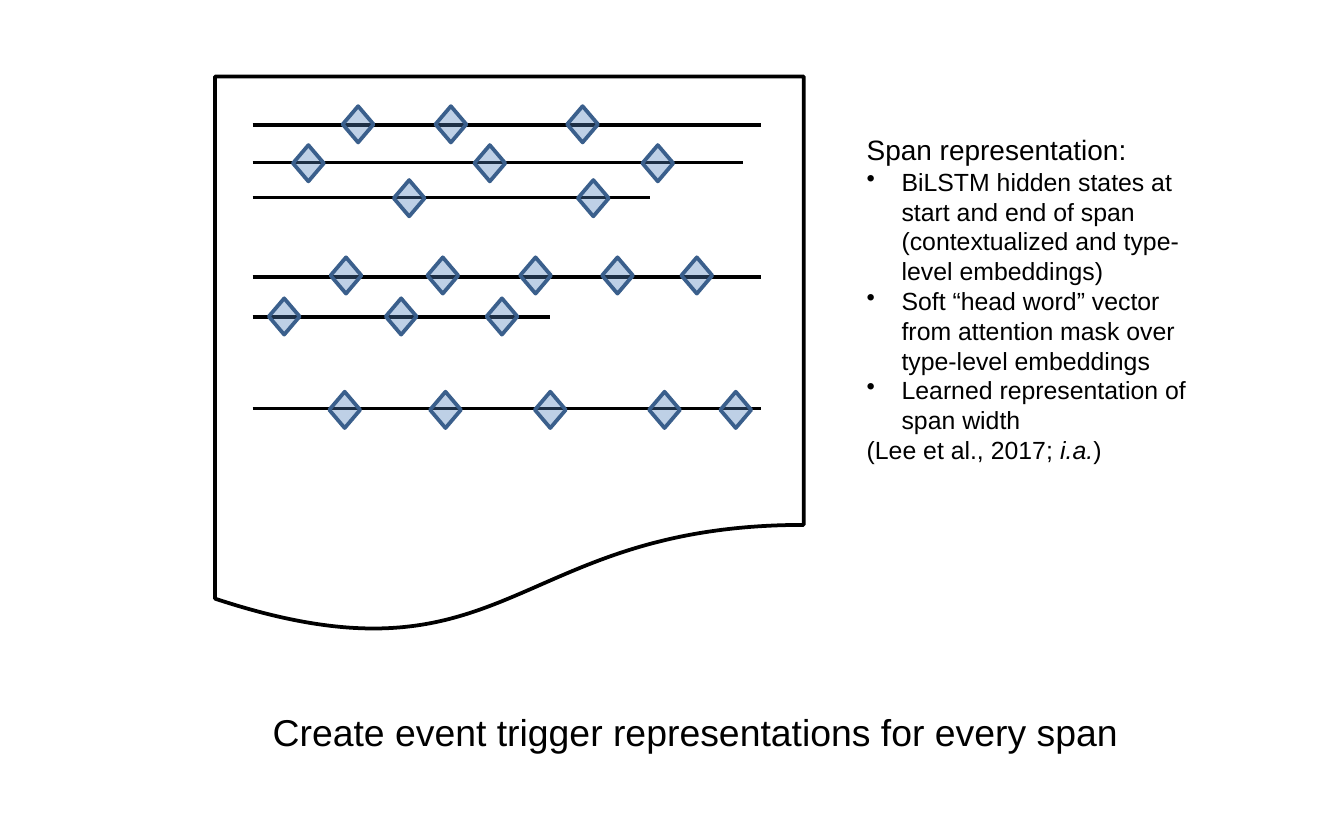
from lxml import etree
from pptx import Presentation, util as u
from pptx.dml.color import RGBColor
from pptx.enum import shapes, text
from pptx.oxml.ns import qn

presentation = Presentation()
presentation.slide_width = u.Inches(10)
presentation.slide_height = u.Inches(6.25)
slide = presentation.slides.add_slide(presentation.slide_layouts[6])

# The slide is a grid of 1000 columns by 625 rows of square cells.
CELL = presentation.slide_width // 1000
BLACK = "000000"
DIAMOND_WIDTH, DIAMOND_HEIGHT = 23, 27
LINE_START = 188

# Each sentence: row of its line, column where it ends,
# top row of its diamonds, left columns of its diamonds.
SENTENCES = [
    (93, 566, 79, [255, 324, 422]),
    (121, 553, 108, [218, 353, 478]),
    (147, 484, 134, [293, 430]),
    (206, 566, 191.5, [246, 318, 387, 448, 507]),
    (236, 409, 222, [200, 287, 362]),
    (304, 566, 291.5, [245, 320, 398, 483, 536]),
]


def paint(color_format, color):
    color_format.rgb = RGBColor.from_string(color)


def cells(*counts):
    """Turn counts of grid cells into lengths."""
    return [u.Emu(int(count * CELL)) for count in counts]


# Document page
page = slide.shapes.add_shape(
    shapes.MSO_SHAPE.FLOWCHART_DOCUMENT, *cells(160, 57, 438, 416))
page.shadow.inherit = False
page.fill.background()
paint(page.line.color, BLACK)
page.line.width = u.Pt(2)

# Sentence lines
for row, end, _, _ in SENTENCES:
    line = slide.shapes.add_connector(
        shapes.MSO_CONNECTOR.STRAIGHT, *cells(LINE_START, row, end, row))
    paint(line.line.color, BLACK)
    line.line.width = u.Pt(2)
    etree.SubElement(line._element.spPr, qn("a:effectLst"))

# Span diamonds, see-through so that the lines show
for _, _, top, lefts in SENTENCES:
    for left in lefts:
        diamond = slide.shapes.add_shape(
            shapes.MSO_SHAPE.DIAMOND,
            *cells(left, top, DIAMOND_WIDTH, DIAMOND_HEIGHT))
        diamond.shadow.inherit = False
        diamond.fill.solid()
        paint(diamond.fill.fore_color, "4F81BD")
        fill_color = diamond._element.spPr.find(qn("a:solidFill"))[0]
        etree.SubElement(fill_color, qn("a:alpha"), val="37000")
        paint(diamond.line.color, "3A5F8C")
        diamond.line.width = u.Pt(2)

# Caption and notes: place, wrapping, then (size, bulleted, runs) per paragraph
TEXTS = [
    ((193, 523, 655, 44), False, [
        (20, False, ["Create event trigger representations for every span"]),
    ]),
    ((635, 94, 258, 260), True, [
        (15, False, ["Span representation:"]),
        (13.3, True, ["BiLSTM hidden states at start and end of span "
                      "(contextualized and type-level embeddings)"]),
        (13.3, True, ["Soft “head word” vector from attention mask over "
                      "type-level embeddings"]),
        (13.3, True, ["Learned representation of span width"]),
        (13.3, False, ["(Lee et al., 2017; ", "i.a.", ")"]),
    ]),
]
for place, wrap, paragraphs in TEXTS:
    frame = slide.shapes.add_textbox(*cells(*place)).text_frame
    frame.word_wrap = wrap
    frame.auto_size = text.MSO_AUTO_SIZE.SHAPE_TO_FIT_TEXT
    for index, (size, bulleted, runs) in enumerate(paragraphs):
        paragraph = frame.add_paragraph() if index else frame.paragraphs[0]
        paragraph.font.name = "Arial"
        paragraph.font.size = u.Pt(size)
        paint(paragraph.font.color, BLACK)
        for words in runs:
            run = paragraph.add_run()
            run.text = words
            if words == "i.a.":
                run.font.italic = True
        if bulleted:
            properties = paragraph._p.get_or_add_pPr()
            indent = u.Inches(0.26)
            properties.set("marL", str(indent))
            properties.set("indent", str(-indent))
            bullet = etree.Element(qn("a:buChar"), char="•")
            properties.insert(0, bullet)

presentation.save("out.pptx")
